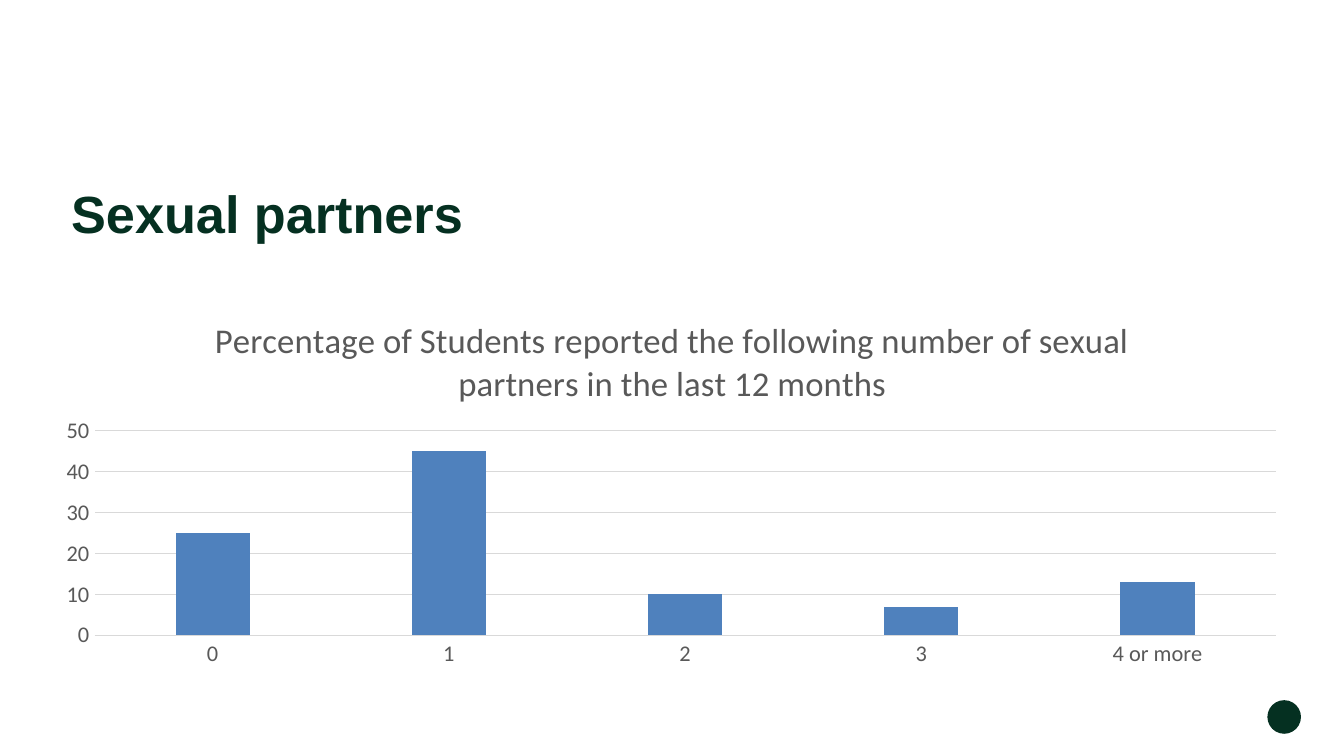
import pptx
import pptx.util
import pptx.chart.data
import pptx.dml.color
import pptx.enum.chart
import pptx.enum.shapes
import pptx.enum.text
import pptx.oxml
import pptx.oxml.ns

Inches = pptx.util.Inches
Pt = pptx.util.Pt
RGBColor = pptx.dml.color.RGBColor

GREEN = RGBColor(0x05, 0x30, 0x21)
BLUE = RGBColor(0x4F, 0x81, 0xBD)
GREY = RGBColor(0x59, 0x59, 0x59)
RULE = RGBColor(0xD9, 0xD9, 0xD9)


def set_font(font, color, **values):
    for name, value in values.items():
        setattr(font, name, value)
    font.color.rgb = color


def set_line(line):
    line.color.rgb = RULE
    line.width = Pt(0.75)


def set_plot_layout(chart, x, y, w, h):
    plot_area = chart.element.chart.plotArea
    for old in plot_area.findall(pptx.oxml.ns.qn("c:layout")):
        plot_area.remove(old)
    values = {"layoutTarget": "inner", "xMode": "edge", "yMode": "edge",
              "x": x, "y": y, "w": w, "h": h}
    parts = "".join(f'<c:{name} val="{value}"/>' for name, value in values.items())
    plot_area.insert(0, pptx.oxml.parse_xml(
        f'<c:layout {pptx.oxml.ns.nsdecls("c")}>'
        f'<c:manualLayout>{parts}</c:manualLayout></c:layout>'))


def add_title(s, text, x, y, w, h):
    sp = s.shapes.add_textbox(Inches(x), Inches(y), Inches(w), Inches(h))
    tf = sp.text_frame
    frame_format = {
        "word_wrap": True,
        "vertical_anchor": pptx.enum.text.MSO_ANCHOR.TOP,
        "margin_left": Inches(0.2),
        "margin_right": Inches(0.2),
        "margin_top": Inches(0.1),
        "margin_bottom": Inches(0.1),
    }
    for name, value in frame_format.items():
        setattr(tf, name, value)
    p = tf.paragraphs[0]
    p.line_spacing = 0.8
    r = p.add_run()
    r.text = text
    set_font(r.font, GREEN, name="Arial", size=Pt(28), bold=True)


def add_partner_chart(s, x, y, w, h):
    data = pptx.chart.data.CategoryChartData()
    data.categories = ["0", "1", "2", "3", "4 or more"]
    data.add_series("Series 1", [25, 45, 10, 7, 13])
    chart = s.shapes.add_chart(
        pptx.enum.chart.XL_CHART_TYPE.COLUMN_CLUSTERED,
        Inches(x), Inches(y), Inches(w), Inches(h), data).chart
    chart.has_legend = False
    set_font(chart.font, GREY, name="Calibri", size=Pt(12))

    chart.has_title = True
    p = chart.chart_title.text_frame.paragraphs[0]
    r = p.add_run()
    r.text = ("Percentage of Students reported the following number of sexual "
              "partners in the last 12 months")
    set_font(r.font, GREY, name="Calibri", size=Pt(18.6), bold=False)
    chart.chart_title.include_in_layout = False

    plot = chart.plots[0]
    for name, value in {"gap_width": 219, "overlap": -27,
                        "vary_by_categories": False}.items():
        setattr(plot, name, value)
    fill = plot.series[0].format.fill
    fill.solid()
    fill.fore_color.rgb = BLUE

    for axis in (chart.category_axis, chart.value_axis):
        axis.major_tick_mark = pptx.enum.chart.XL_TICK_MARK.NONE
        axis.minor_tick_mark = pptx.enum.chart.XL_TICK_MARK.NONE
        set_font(axis.tick_labels.font, GREY, name="Calibri", size=Pt(12))
    set_line(chart.category_axis.format.line)
    value_axis = chart.value_axis
    for name, value in {"minimum_scale": 0, "maximum_scale": 50,
                        "major_unit": 10, "has_major_gridlines": True}.items():
        setattr(value_axis, name, value)
    value_axis.format.line.fill.background()
    set_line(value_axis.major_gridlines.format.line)
    set_plot_layout(chart, 0.04, 0.36, 0.94, 0.54)


def add_page_dot(s, x, y, size):
    sp = s.shapes.add_shape(pptx.enum.shapes.MSO_SHAPE.OVAL,
                            Inches(x), Inches(y), Inches(size), Inches(size))
    sp.shadow.inherit = False
    sp.fill.solid()
    sp.fill.fore_color.rgb = GREEN
    sp.line.fill.background()


def main():
    prs = pptx.Presentation()
    prs.slide_width = Inches(10)
    prs.slide_height = prs.slide_width * 9 // 16
    s = prs.slides.add_slide(prs.slide_layouts[6])
    left, width = 0.33, 9.35
    add_page_dot(s, 9.43, 5.21, 0.25)
    add_partner_chart(s, left, 2.19, width, 2.82)
    add_title(s, "Sexual partners", left, 1.34, width, 0.69)
    prs.save("out.pptx")


if __name__ == "__main__":
    main()
